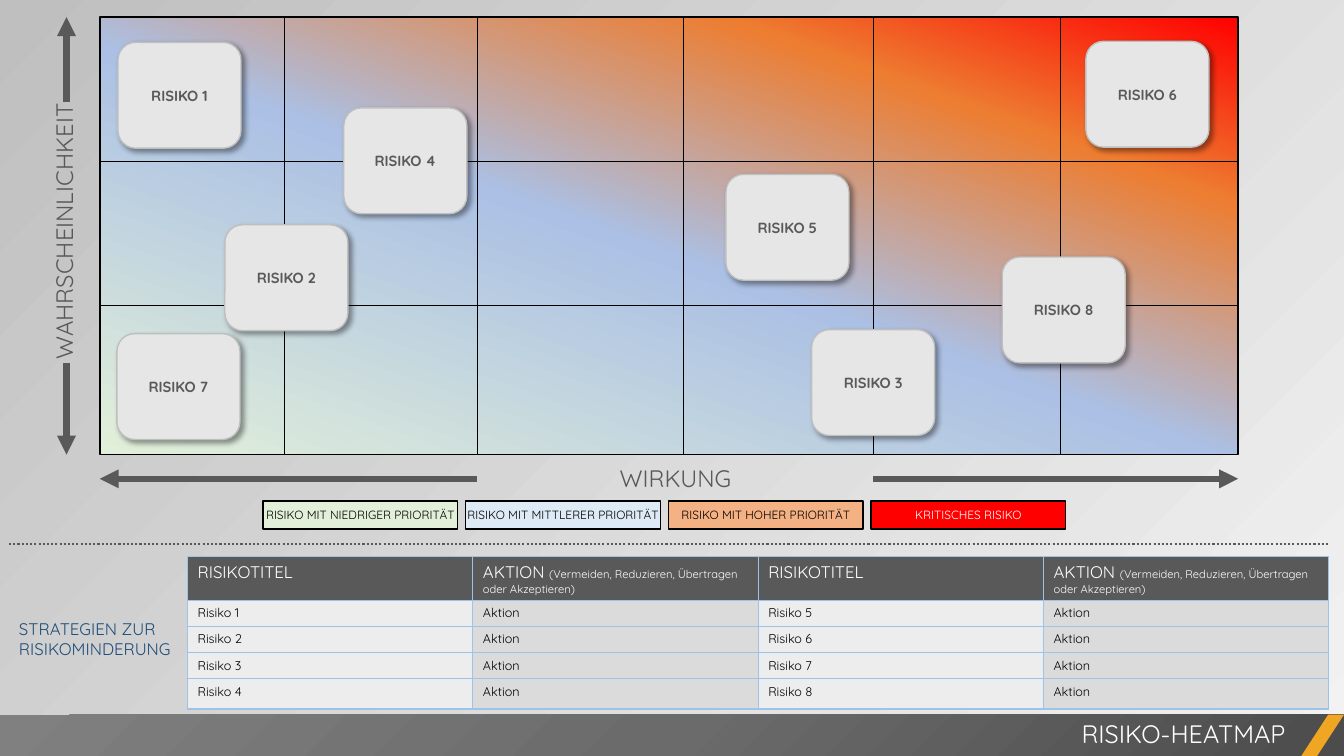
"""Builds the risk heat map slide with its legend and mitigation table."""
from pptx import Presentation
from pptx.dml.color import RGBColor
from pptx.enum.dml import MSO_LINE
from pptx.enum.shapes import MSO_CONNECTOR, MSO_SHAPE
from pptx.enum.text import MSO_ANCHOR, MSO_AUTO_SIZE, PP_ALIGN
from pptx.oxml.ns import qn
from pptx.util import Emu, Pt
from lxml.etree import SubElement

PX = 9144
FONT = "Quicksand"

BLACK = RGBColor(0x00, 0x00, 0x00)
WHITE = RGBColor(0xFF, 0xFF, 0xFF)
GRAPHITE = RGBColor(0x59, 0x59, 0x59)
SILVER = RGBColor(0xBF, 0xBF, 0xBF)
MIST = RGBColor(0xF2, 0xF2, 0xF2)
CARD = RGBColor(0xE7, 0xE6, 0xE6)
NAVY = RGBColor(0x1F, 0x4E, 0x79)
AMBER = RGBColor(0xF0, 0xA6, 0x22)
GREEN = RGBColor(0xE2, 0xF0, 0xD9)
PALE_BLUE = RGBColor(0xDE, 0xEB, 0xF7)
PEACH = RGBColor(0xF4, 0xB1, 0x83)
RED = RGBColor(0xFF, 0x00, 0x00)
HEAT_BLUE = RGBColor(0xAB, 0xC0, 0xE4)
HEAT_ORANGE = RGBColor(0xED, 0x7D, 0x31)
BAR_DARK = RGBColor(0x4C, 0x4C, 0x4C)
BAR_MID = RGBColor(0x6B, 0x6B, 0x6B)
BAR_LIGHT = RGBColor(0x80, 0x80, 0x80)
TABLE_RULE = RGBColor(0x9D, 0xC3, 0xE6)
RISK_CELL = RGBColor(0xED, 0xED, 0xED)
ACTION_CELL = RGBColor(0xDB, 0xDB, 0xDB)


def px(*lengths):
    return [Emu(length * PX) for length in lengths]


class HeatmapSlide:
    def __init__(self, deck):
        self.slide = deck.slides.add_slide(deck.slide_layouts[5])
        self.shapes = self.slide.shapes

    def add_runs(self, frame, runs, align=PP_ALIGN.LEFT):
        paragraph = frame.paragraphs[0]
        paragraph.alignment = align
        for words, size, color, bold in runs:
            run = paragraph.add_run()
            run.text = words
            run.font.name = FONT
            run.font.size = Pt(size)
            run.font.bold = bold
            run.font.color.rgb = color

    def gradient(self, fill, owner, stops, angle=None):
        fill.gradient()
        grad = next(owner.iter(qn("a:gradFill")))
        grad.clear()
        grad.set("rotWithShape", "1")
        ramp = SubElement(grad, qn("a:gsLst"))
        for position, color in stops:
            stop = SubElement(ramp, qn("a:gs"), pos=str(position * 1000))
            SubElement(stop, qn("a:srgbClr"), val=str(color))
        if angle is None:
            circle = SubElement(grad, qn("a:path"))
            circle.set("path", "circle")
            SubElement(circle, qn("a:fillToRect"), l="100000", t="100000")
        else:
            SubElement(grad, qn("a:lin"), ang=str(angle * 60000), scaled="0")

    def background(self, stops, angle):
        self.gradient(self.slide.background.fill, self.slide.element, stops, angle)

    def title(self, box, words):
        heading = self.shapes.title
        heading.left, heading.top, heading.width, heading.height = px(*box)
        frame = heading.text_frame
        frame.auto_size = MSO_AUTO_SIZE.NONE
        frame.vertical_anchor = MSO_ANCHOR.TOP
        self.add_runs(frame, [(words, 18, WHITE, False)], PP_ALIGN.RIGHT)
        heading.element.getparent().append(heading.element)

    def shape(self, kind, box, fill=None, outline=None):
        shape = self.shapes.add_shape(kind, *px(*box))
        shape.shadow.inherit = False
        if fill is not None:
            shape.fill.solid()
            shape.fill.fore_color.rgb = fill
        if outline is None:
            shape.line.fill.background()
        else:
            shape.line.color.rgb = outline
            shape.line.width = Pt(1)
        return shape

    def gradient_box(self, box, stops, angle=None, outline=None):
        panel = self.shape(MSO_SHAPE.RECTANGLE, box, outline=outline)
        self.gradient(panel.fill, panel.element, stops, angle)

    def label(self, shape, words, size, color, bold=False):
        frame = shape.text_frame
        frame.word_wrap = True
        frame.margin_left = frame.margin_right = 0
        frame.vertical_anchor = MSO_ANCHOR.MIDDLE
        self.add_runs(frame, [(words, size, color, bold)], PP_ALIGN.CENTER)

    def risk_card(self, left, top, words):
        card = self.shape(MSO_SHAPE.ROUNDED_RECTANGLE, (left, top, 122, 105), CARD, SILVER)
        effects = next(card.element.iter(qn("a:effectLst")))
        shadow = SubElement(effects, qn("a:outerShdw"), blurRad="50800", dist="38100",
                            dir="2700000", algn="tl", rotWithShape="0")
        tint = SubElement(shadow, qn("a:srgbClr"), val=str(BLACK))
        SubElement(tint, qn("a:alpha"), val="40000")
        self.label(card, words, 10.5, GRAPHITE, True)

    def text(self, box, words, size, color, align=PP_ALIGN.LEFT, rotation=0):
        caption = self.shapes.add_textbox(*px(*box))
        caption.rotation = rotation
        caption.text_frame.word_wrap = True
        self.add_runs(caption.text_frame, [(words, size, color, False)], align)

    def line(self, ends, color, weight, arrow=False, dash=None):
        rule = self.shapes.add_connector(MSO_CONNECTOR.STRAIGHT, *px(*ends))
        rule.line.color.rgb = color
        rule.line.width = Pt(weight)
        if dash is not None:
            rule.line.dash_style = dash
        properties = rule.element.spPr
        if arrow:
            SubElement(properties.find(qn("a:ln")), qn("a:tailEnd"), type="triangle")
        SubElement(properties, qn("a:effectLst"))

    def cell(self, cell, runs, fill):
        properties = cell._tc.get_or_add_tcPr()
        for side in ("a:lnL", "a:lnR", "a:lnT", "a:lnB"):
            border = SubElement(properties, qn(side), w=str(Pt(1)))
            paint = SubElement(border, qn("a:solidFill"))
            SubElement(paint, qn("a:srgbClr"), val=str(TABLE_RULE))
        cell.fill.solid()
        cell.fill.fore_color.rgb = fill
        self.add_runs(cell.text_frame, runs)

    def table(self, left, top, column_width, row_heights, rows):
        count = len(rows[0])
        frame = self.shapes.add_table(len(rows), count, *px(
            left, top, column_width * count, sum(row_heights)))
        grid = frame.table
        grid.horz_banding = False
        for column in grid.columns:
            column.width = Emu(column_width * PX)
        for row, height in zip(grid.rows, row_heights):
            row.height = Emu(height * PX)
        for r, row in enumerate(rows):
            for c, runs in enumerate(row):
                fill = GRAPHITE if r == 0 else (RISK_CELL, ACTION_CELL)[c % 2]
                self.cell(grid.cell(r, c), runs, fill)


def main():
    deck = Presentation()
    deck.slide_width, deck.slide_height = px(1333, 750)
    board = HeatmapSlide(deck)
    board.background([(0, MIST), (100, SILVER)], 225)

    board.gradient_box((0, 709, 1333, 42), [(0, BAR_DARK), (50, BAR_MID), (100, BAR_LIGHT)])
    accent = board.shape(MSO_SHAPE.PARALLELOGRAM, (1290, 709, 43, 42), AMBER)
    accent.adjustments[0] = 0.65
    board.title((525, 708, 760, 40), "RISIKO-HEATMAP")

    left, top, right, bottom = 99, 17, 1228, 451
    heat = [(0, GREEN), (48, HEAT_BLUE), (78, HEAT_ORANGE), (100, RED)]
    board.gradient_box((left, top, right - left, bottom - top), heat, 290, BLACK)
    for x in (282, 473, 678, 866, 1052):
        board.line((x, top, x, bottom), BLACK, 0.5)
    for y in (160, 303):
        board.line((left, y, right, y), BLACK, 0.5)

    for arrow in ((66, 101, 66, top), (66, 360, 66, bottom),
                  (866, 475, right, 475), (473, 475, left, 475)):
        board.line(arrow, GRAPHITE, 4.5, arrow=True)
    board.text((-82, 210, 291, 39), "WAHRSCHEINLICHKEIT", 17, GRAPHITE, PP_ALIGN.CENTER, 270)
    board.text((473, 455, 394, 39), "WIRKUNG", 17, GRAPHITE, PP_ALIGN.CENTER)

    risk_places = [(117, 42), (223, 223), (805, 327), (341, 107),
                   (720, 173), (1077, 41), (116, 331), (994, 255)]
    for number, (x, y) in enumerate(risk_places, 1):
        board.risk_card(x, y, f"RISIKO {number}")

    legend = [("RISIKO MIT NIEDRIGER PRIORITÄT", GREEN, BLACK),
              ("RISIKO MIT MITTLERER PRIORITÄT", PALE_BLUE, BLACK),
              ("RISIKO MIT HOHER PRIORITÄT", PEACH, BLACK),
              ("KRITISCHES RISIKO", RED, WHITE)]
    for index, (words, fill, ink) in enumerate(legend):
        swatch = board.shape(MSO_SHAPE.RECTANGLE, (261 + 201 * index, 497, 193, 28), fill, BLACK)
        board.label(swatch, words, 8.5, ink)

    board.line((9, 540, 1319, 540), GRAPHITE, 1.5, dash=MSO_LINE.ROUND_DOT)
    board.text((9, 609, 177, 50), "STRATEGIEN ZUR RISIKOMINDERUNG", 12, NAVY)
    header = [[("RISIKOTITEL", 12, WHITE, False)],
              [("AKTION ", 12, WHITE, False),
               ("(Vermeiden, Reduzieren, Übertragen oder Akzeptieren)", 8, WHITE, False)]]
    rows = [header * 2]
    for number in range(1, 5):
        rows.append([[(words, 9, BLACK, False)] for words in (
            f"Risiko {number}", "Aktion", f"Risiko {number + 4}", "Aktion")])
    board.table(186, 552, 283, [42, 26, 26, 26, 30], rows)

    deck.save("out.pptx")


if __name__ == "__main__":
    main()
